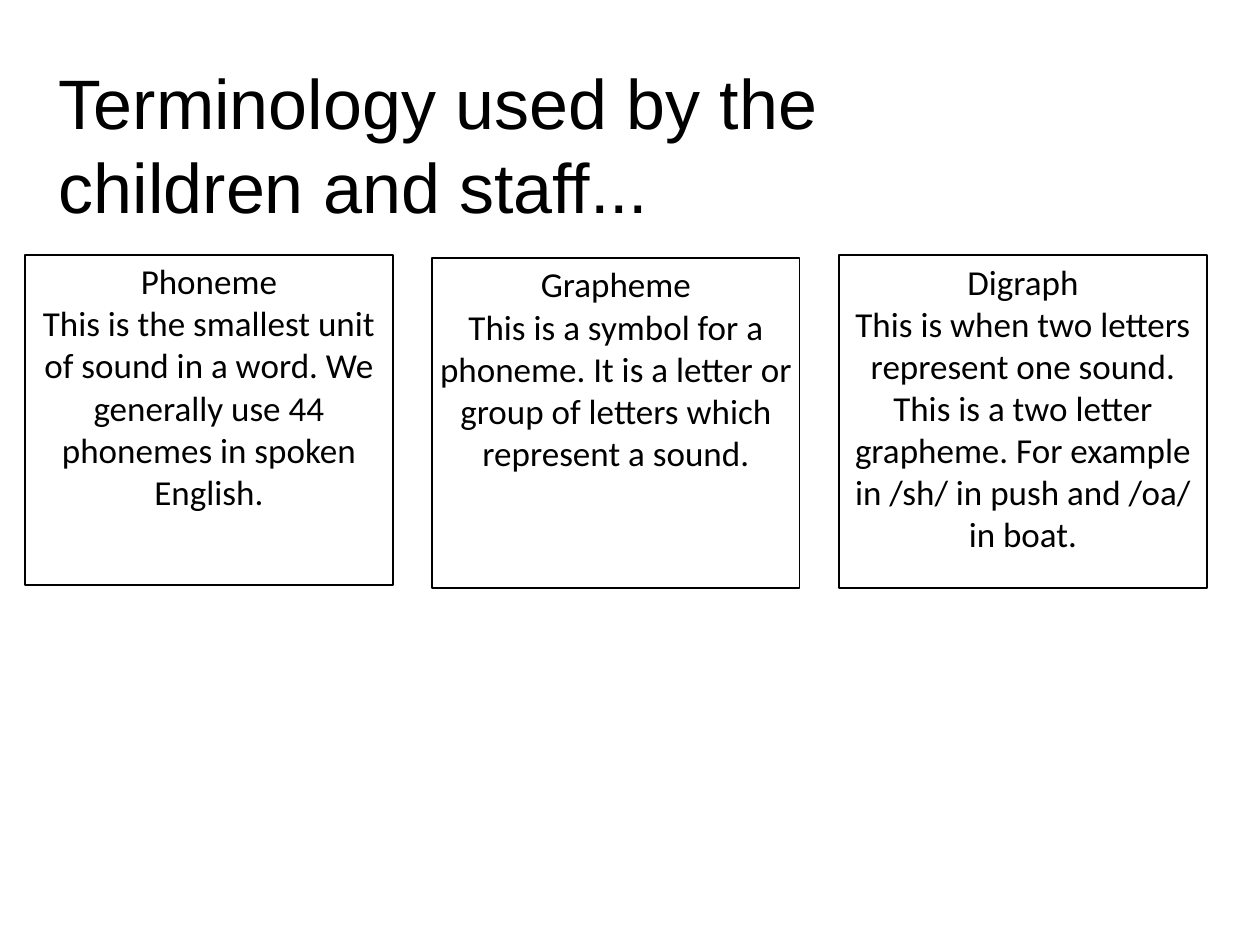
from dataclasses import dataclass

from pptx import Presentation
from pptx.dml.color import RGBColor
from pptx.enum.shapes import MSO_SHAPE
from pptx.enum.text import MSO_ANCHOR, PP_ALIGN
from pptx.util import Emu, Pt

EMU_PER_PX = 914400 // 126


@dataclass(frozen=True)
class Theme:
    ink: RGBColor = RGBColor(0, 0, 0)
    title_font: str = "Arial"
    body_font: str = "Calibri"
    title_size: int = 40
    title_leading: int = 48
    body_size: int = 20
    line_width: float = 0.75
    inset: int = 5


def px(n):
    return Emu(n * EMU_PER_PX)


class SlideBuilder:
    def __init__(self, slide, theme):
        self.s = slide
        self.theme = theme

    def set_text(self, sp, paragraphs, font, size, align):
        tf = sp.text_frame
        tf.word_wrap = True
        tf.vertical_anchor = MSO_ANCHOR.TOP
        tf.margin_left = tf.margin_right = px(self.theme.inset)
        tf.margin_top = tf.margin_bottom = px(self.theme.inset)
        tf.text = "\n".join(paragraphs)
        for p in tf.paragraphs:
            p.alignment = align
            p.font.name = font
            p.font.size = Pt(size)
            p.font.color.rgb = self.theme.ink
        return tf

    def title(self, text, x, y, w, h):
        t = self.theme
        sp = self.s.shapes.add_textbox(px(x), px(y), px(w), px(h))
        tf = self.set_text(sp, [text], t.title_font, t.title_size, PP_ALIGN.LEFT)
        tf.paragraphs[0].line_spacing = Pt(t.title_leading)

    def card(self, term, meaning, x, y, w, h):
        t = self.theme
        sp = self.s.shapes.add_shape(MSO_SHAPE.RECTANGLE, px(x), px(y), px(w), px(h))
        sp.shadow.inherit = False
        sp.fill.background()
        sp.line.color.rgb = t.ink
        sp.line.width = Pt(t.line_width)
        self.set_text(sp, [term, meaning], t.body_font, t.body_size, PP_ALIGN.CENTER)


CARDS = [
    ("Phoneme", "This is the smallest unit of sound in a word. We generally use 44 "
     "phonemes in spoken English.", 255, 330),
    ("Grapheme", "This is a symbol for a phoneme. It is a letter or group of letters "
     "which represent a sound.", 258, 330),
    ("Digraph", "This is when two letters represent one sound. This is a two letter "
     "grapheme. For example in /sh/ in push and /oa/ in boat.", 255, 333),
]
CARD_LEFT, CARD_WIDTH, CARD_PITCH = 25, 368, 407


def main():
    prs = Presentation()
    prs.slide_width, prs.slide_height = px(1260), px(945)
    s = prs.slides.add_slide(prs.slide_layouts[6])
    builder = SlideBuilder(s, Theme())
    builder.title("Terminology used by the children and staff...", 54, 55, 856, 199)
    for i, (term, meaning, top, height) in enumerate(CARDS):
        left = CARD_LEFT + i * CARD_PITCH
        builder.card(term, meaning, left, top, CARD_WIDTH, height)
    prs.save("out.pptx")


if __name__ == "__main__":
    main()
